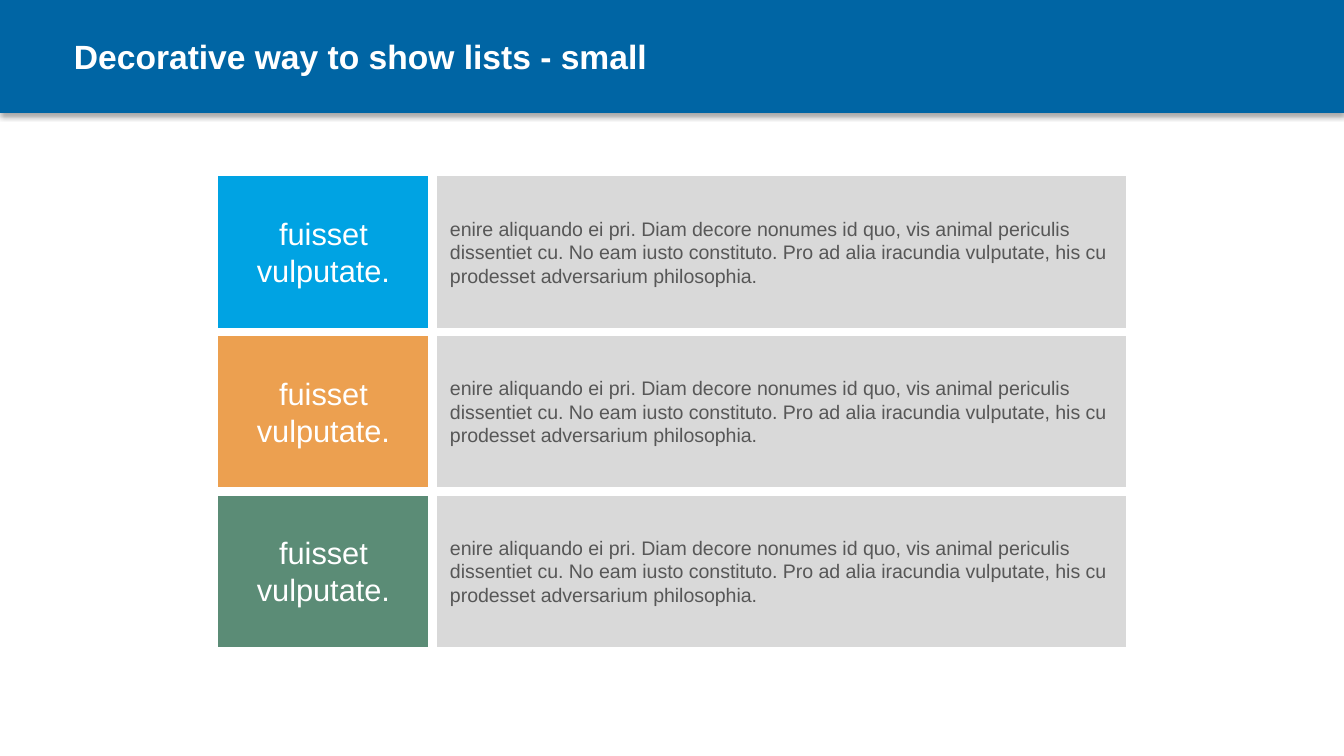
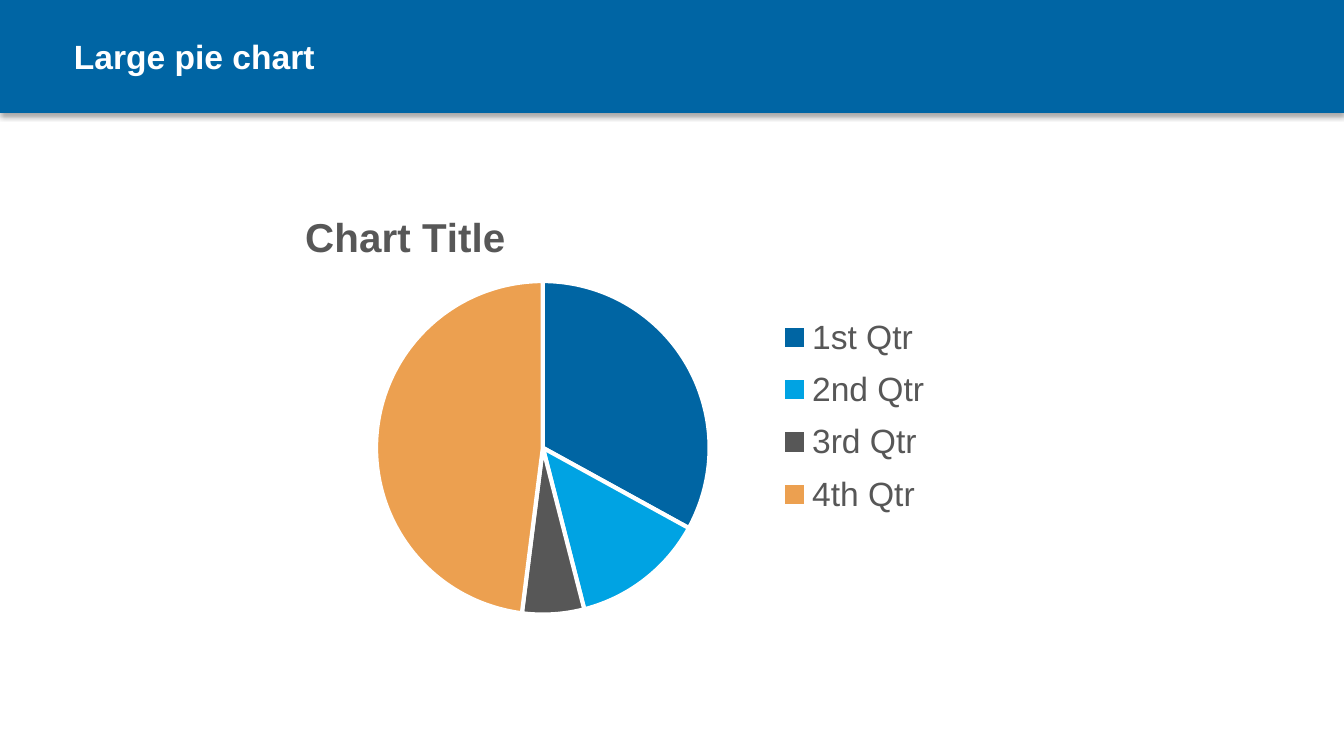
"""Build a two-slide deck: a decorative list and a pie chart."""
import pptx
import pptx.chart.data
import pptx.dml.color
import pptx.enum.chart
import pptx.enum.shapes
import pptx.enum.text
import pptx.oxml
import pptx.oxml.ns
import pptx.util

Inches, Pt = pptx.util.Inches, pptx.util.Pt
SHAPE = pptx.enum.shapes.MSO_SHAPE
ALIGN = pptx.enum.text.PP_ALIGN
ANCHOR = pptx.enum.text.MSO_ANCHOR

FONT = "Arial"
COLORS = {
    "band": "0065A4",
    "navy": "0065A3",
    "sky": "00A3E3",
    "orange": "ECA050",
    "green": "5B8C76",
    "panel": "D9D9D9",
    "text": "575757",
    "white": "FFFFFF",
}

LIST_TITLE = "Decorative way to show lists - small"
LABEL = "fuisset vulputate."
DETAIL = (
    "enire aliquando ei pri. Diam decore nonumes id quo, vis animal periculis "
    "dissentiet cu. No eam iusto constituto. Pro ad alia iracundia vulputate, "
    "his cu prodesset adversarium philosophia."
)
ROWS = [("sky", LABEL, DETAIL), ("orange", LABEL, DETAIL), ("green", LABEL, DETAIL)]

PIE_TITLE = "Large pie chart"
CHART_TITLE = "Chart Title"
SERIES = "Series 1"
QUARTERS = [
    ("1st Qtr", 33, "navy"),
    ("2nd Qtr", 13, "sky"),
    ("3rd Qtr", 6, "text"),
    ("4th Qtr", 48, "orange"),
]

WIDTH, HEIGHT = 10, 10 * 9 / 16
GAP = 1 / 16
ROW_TOP, ROW_HEIGHT = 21 * GAP, 18 * GAP
LABEL_LEFT, LABEL_WIDTH = 26 * GAP, 25 * GAP
DETAIL_LEFT, DETAIL_WIDTH = LABEL_LEFT + LABEL_WIDTH + GAP, 82 * GAP


def rgb(name):
    return pptx.dml.color.RGBColor.from_string(COLORS[name])


def set_font(font, size, color, bold=False):
    font.name, font.size, font.bold = FONT, Pt(size), bold
    font.color.rgb = rgb(color)


def add_box(s, shape, left, top, width, height, fill):
    sp = s.shapes.add_shape(
        shape, Inches(left), Inches(top), Inches(width), Inches(height))
    sp.shadow.inherit = False
    sp.fill.solid()
    sp.fill.fore_color.rgb = rgb(fill)
    sp.line.fill.background()
    return sp


def add_text_box(s, left, top, width, fill, text, size, color, align):
    sp = add_box(s, SHAPE.FLOWCHART_PROCESS, left, top, width, ROW_HEIGHT, fill)
    tf = sp.text_frame
    tf.word_wrap = True
    tf.vertical_anchor = ANCHOR.MIDDLE
    p = tf.paragraphs[0]
    p.text, p.alignment = text, align
    set_font(p.font, size, color)


def add_slide(prs, title):
    s = prs.slides.add_slide(prs.slide_layouts[5])
    band = add_box(s, SHAPE.RECTANGLE, 0, 0, WIDTH, 0.84, "band")
    band.element.spPr.find(pptx.oxml.ns.qn("a:effectLst")).append(pptx.oxml.parse_xml(
        f'<a:outerShdw {pptx.oxml.ns.nsdecls("a")} blurRad="{Pt(3)}" dist="{Pt(1.8)}" '
        'dir="5400000" algn="t" rotWithShape="0"><a:srgbClr val="000000">'
        '<a:alpha val="35000"/></a:srgbClr></a:outerShdw>'))
    sp = s.shapes.title
    sp.element.addprevious(band.element)
    sp.left, sp.top, sp.width, sp.height = (Inches(v) for v in (0.5, 0.01, 9, 0.61))
    tf = sp.text_frame
    tf.margin_left = tf.margin_right = tf.margin_top = tf.margin_bottom = Inches(0.05)
    tf.vertical_anchor = ANCHOR.BOTTOM
    tf.word_wrap = True
    p = tf.paragraphs[0]
    p.text, p.alignment, p.line_spacing = title, ALIGN.LEFT, 0.9
    set_font(p.font, 18, "white", bold=True)
    return s


def place_part(chart, part, index, target="", **fractions):
    element = chart.element.xpath(part)[0]
    for old in element.xpath("c:layout"):
        element.remove(old)
    modes = "".join(f'<c:{k}Mode val="edge"/>' for k in "xy")
    values = "".join(f'<c:{k} val="{v}"/>' for k, v in fractions.items())
    element.insert(index, pptx.oxml.parse_xml(
        f'<c:layout {pptx.oxml.ns.nsdecls("c")}><c:manualLayout>'
        f'{target}{modes}{values}</c:manualLayout></c:layout>'))


def add_list_slide(prs):
    s = add_slide(prs, LIST_TITLE)
    for i, (fill, label, detail) in enumerate(ROWS):
        top = ROW_TOP + i * (ROW_HEIGHT + GAP)
        add_text_box(s, LABEL_LEFT, top, LABEL_WIDTH, fill, label, 16.5, "white", ALIGN.CENTER)
        add_text_box(s, DETAIL_LEFT, top, DETAIL_WIDTH, "panel", detail, 10.5, "text", ALIGN.LEFT)


def add_pie_slide(prs):
    s = add_slide(prs, PIE_TITLE)
    data = pptx.chart.data.CategoryChartData()
    data.categories = [name for name, _, _ in QUARTERS]
    data.add_series(SERIES, [value for _, value, _ in QUARTERS])
    chart = s.shapes.add_chart(
        pptx.enum.chart.XL_CHART_TYPE.PIE,
        Inches(2.06), Inches(1.31), Inches(5.21), Inches(3.4), data).chart
    set_font(chart.font, 18, "text")

    chart.has_title = True
    tf = chart.chart_title.text_frame
    tf.text = CHART_TITLE
    set_font(tf.paragraphs[0].font, 21.6, "text", bold=True)

    chart.has_legend = True
    chart.legend.position = pptx.enum.chart.XL_LEGEND_POSITION.RIGHT
    chart.legend.include_in_layout = False
    set_font(chart.legend.font, 18, "text")

    plot = chart.plots[0]
    plot.vary_by_categories = True
    for i, (_, _, color) in enumerate(QUARTERS):
        fmt = plot.series[0].points[i].format
        fmt.fill.solid()
        fmt.fill.fore_color.rgb = rgb(color)
        fmt.line.color.rgb = rgb("white")
        fmt.line.width = Pt(2.25)

    place_part(chart, "c:chart/c:title", 1, x=0.03, y=0.06)
    place_part(chart, "c:chart/c:legend", 1, x=0.7, y=0.28, w=0.25, h=0.49)
    place_part(chart, "c:chart/c:plotArea", 0, '<c:layoutTarget val="inner"/>',
               x=0.14, y=0.23, w=0.48, h=0.73)


def main():
    prs = pptx.Presentation()
    prs.slide_width, prs.slide_height = Inches(WIDTH), Inches(HEIGHT)
    add_list_slide(prs)
    add_pie_slide(prs)
    prs.save("out.pptx")


if __name__ == "__main__":
    main()
